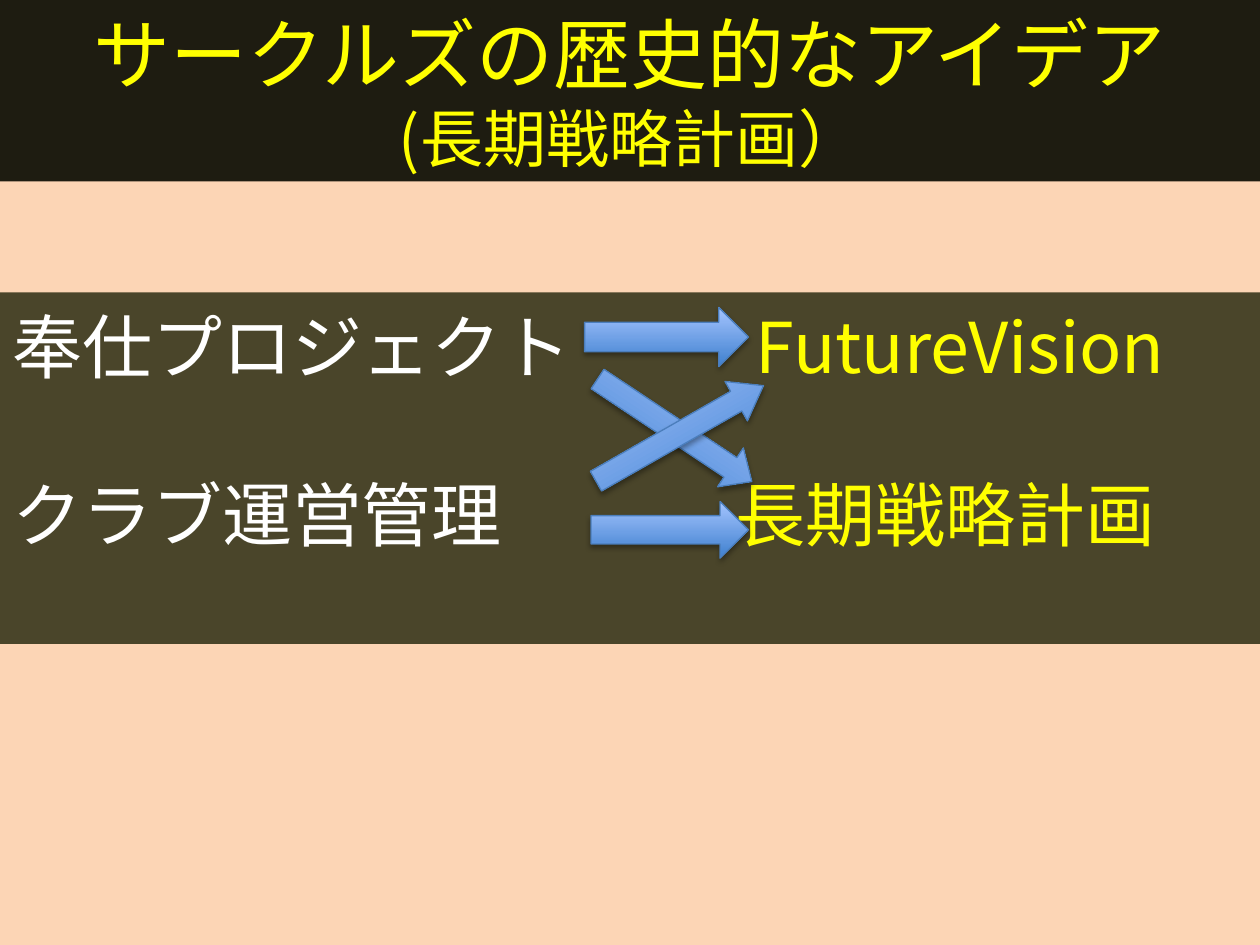
from lxml.etree import SubElement
from pptx import Presentation
from pptx.dml.color import RGBColor
from pptx.enum.shapes import MSO_SHAPE
from pptx.enum.text import MSO_ANCHOR, PP_ALIGN
from pptx.oxml import parse_xml
from pptx.oxml.ns import qn
from pptx.util import Inches, Pt

TITLE = ["サークルズの歴史的なアイデア", "(長期戦略計画）"]
ROWS = [
    ("奉仕プロジェクト", "FutureVision", 5.9),
    ("クラブ運営管理", "長期戦略計画", 5.74),
]
ARROWS = [
    (4.64, 2.44, 1.3, 0.47, 0, 0.5),
    (4.62, 3.23, 1.47, 0.37, 33.6, 0.55),
    (4.69, 3.98, 1.25, 0.45, 0, 0.5),
    (4.63, 3.26, 1.53, 0.36, 330.3, 0.69),
]
THEME = {
    "font": "Noto Sans CJK JP",
    "background": "FCD5B5",
    "title_band": "1E1C11",
    "body_band": "4A452A",
    "accent": "FFFF00",
    "text": "FFFFFF",
    "arrow_dark": "3F80CE",
    "arrow_light": "A4C4FF",
    "arrow_line": "4B7EBC",
    "title_sizes": [44, 36],
    "body_size": 40,
    "line_factor": 1.2,
}
SHADOW = (
    '<a:effectLst xmlns:a="http://schemas.openxmlformats.org/drawingml/2006/main">'
    '<a:outerShdw blurRad="40000" dist="23000" dir="5400000" rotWithShape="0">'
    '<a:srgbClr val="000000"><a:alpha val="35000"/></a:srgbClr>'
    "</a:outerShdw></a:effectLst>"
)


def color(name):
    return RGBColor.from_string(THEME[name])


def apply_format(target, values):
    for name, value in values.items():
        setattr(target, name, value)


def add_band(page, top, height, fill, frame_format):
    band = page.shapes.add_shape(
        MSO_SHAPE.RECTANGLE, 0, Inches(top), Inches(10), Inches(height)
    )
    band.shadow.inherit = False
    band.fill.solid()
    band.fill.fore_color.rgb = color(fill)
    band.line.fill.background()
    apply_format(band.text_frame, {"word_wrap": True, **frame_format})
    return band.text_frame


def add_paragraph(frame, index, size, alignment):
    para = frame.paragraphs[0] if index == 0 else frame.add_paragraph()
    line_spacing = Pt(size * THEME["line_factor"])
    apply_format(para, {"alignment": alignment, "line_spacing": line_spacing})
    return para


def add_span(para, text, size, tone):
    span = para.add_run()
    span.text = text
    apply_format(span.font, {"size": Pt(size), "name": THEME["font"]})
    span.font.color.rgb = color(tone)
    SubElement(span.font._element, qn("a:ea"), typeface=THEME["font"])


def add_tab_stop(para, position):
    tabs = SubElement(para._p.get_or_add_pPr(), qn("a:tabLst"))
    SubElement(tabs, qn("a:tab"), pos=str(Inches(position)), algn="l")


def add_title(page):
    frame = add_band(page, 0, 1.44, "title_band", {"vertical_anchor": MSO_ANCHOR.MIDDLE})
    for index, (text, size) in enumerate(zip(TITLE, THEME["title_sizes"])):
        para = add_paragraph(frame, index, size, PP_ALIGN.CENTER)
        add_span(para, text, size, "accent")


def add_body(page):
    frame_format = {"vertical_anchor": MSO_ANCHOR.TOP, "margin_top": Inches(0.09)}
    frame = add_band(page, 2.32, 2.79, "body_band", frame_format)
    size = THEME["body_size"]
    for index, (activity, plan, position) in enumerate(ROWS):
        para = add_paragraph(frame, index, size, PP_ALIGN.LEFT)
        para.space_before = Pt(index * size * THEME["line_factor"])
        add_tab_stop(para, position)
        add_span(para, activity + "\t", size, "text")
        add_span(para, plan, size, "accent")


def add_arrow(page, left, top, width, height, rotation, head):
    bounds = [Inches(value) for value in (left, top, width, height)]
    arrow = page.shapes.add_shape(MSO_SHAPE.RIGHT_ARROW, *bounds)
    arrow.rotation = rotation
    arrow.adjustments[1] = head
    arrow.fill.gradient()
    arrow.fill.gradient_angle = 90
    for stop, tone in zip(arrow.fill.gradient_stops, ("arrow_dark", "arrow_light")):
        stop.color.rgb = color(tone)
    arrow.line.color.rgb = color("arrow_line")
    arrow.line.width = Pt(0.75)
    arrow._element.spPr.append(parse_xml(SHADOW))


def main():
    deck = Presentation()
    apply_format(deck, {"slide_width": Inches(10), "slide_height": Inches(7.5)})
    page = deck.slides.add_slide(deck.slide_layouts[6])
    page.background.fill.solid()
    page.background.fill.fore_color.rgb = color("background")
    add_title(page)
    add_body(page)
    for arrow in ARROWS:
        add_arrow(page, *arrow)
    deck.save("out.pptx")


if __name__ == "__main__":
    main()
